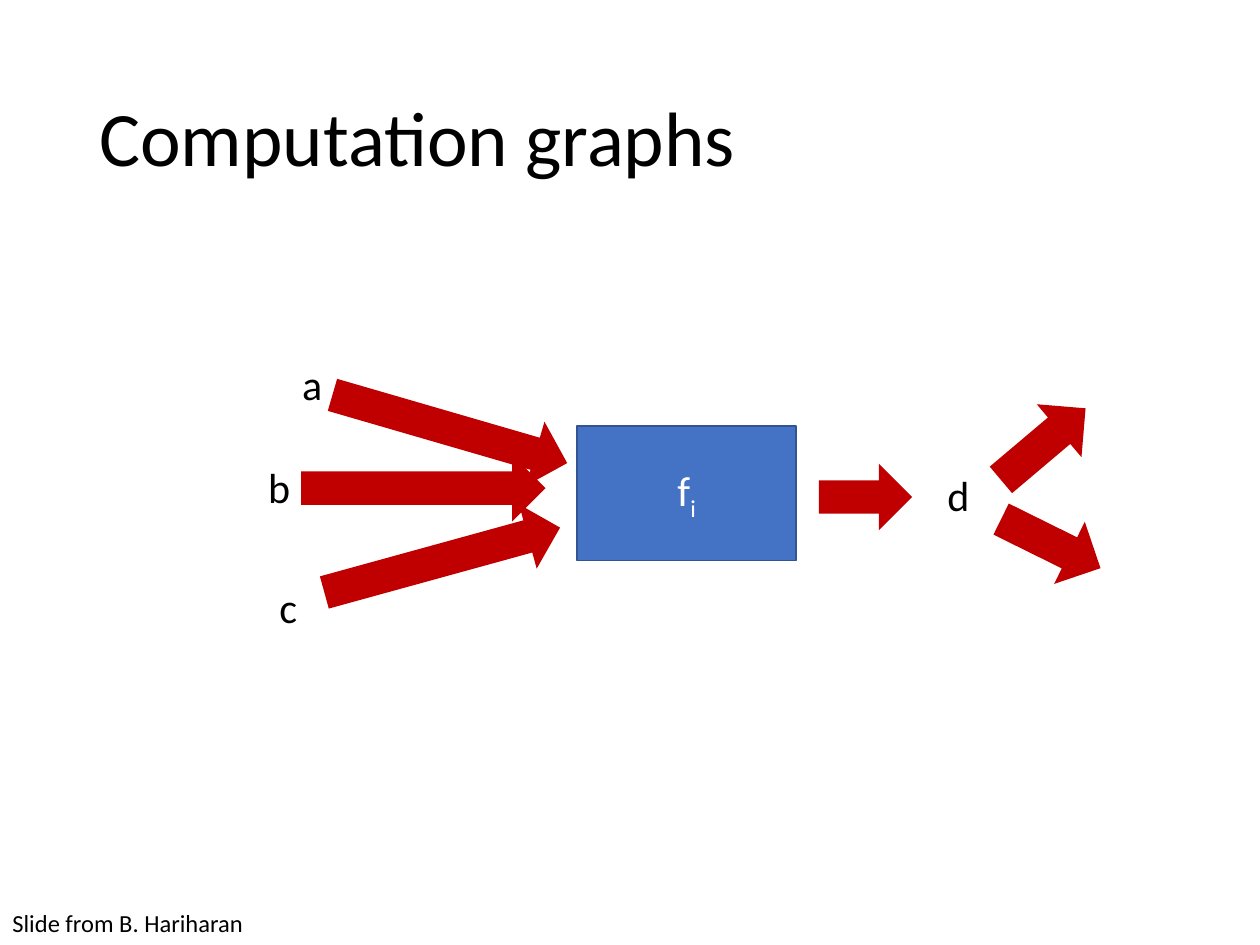
from pptx import Presentation
from pptx import util as u
from pptx.dml.color import RGBColor
from pptx.enum import shapes, text

BLACK = RGBColor(0, 0, 0)
WHITE = RGBColor(255, 255, 255)
BLUE = RGBColor(0x44, 0x72, 0xC4)
NAVY = RGBColor(0x32, 0x54, 0x91)
RED = RGBColor(0xC0, 0, 0)

LABELS = [("a", 2.3, 2.8), ("b", 2.03, 3.61), ("c", 2.12, 4.57), ("d", 7.42, 3.68)]
ARROWS = [
    (6.5, 3.68, 0.74, 0.53, 0),
    (2.6, 3.14, 1.94, 0.53, 16.2),
    (2.54, 4.18, 1.94, 0.53, 344.6),
    (2.39, 3.61, 1.94, 0.53, 0),
    (7.84, 3.25, 0.88, 0.55, 319.8),
    (7.9, 4.04, 0.88, 0.55, 26.3),
]


def write(frame, words, size=24, color=BLACK, align=text.PP_ALIGN.LEFT,
          anchor=text.MSO_ANCHOR.TOP, spacing=1.0, sub=None):
    """Write one paragraph, with an optional subscript at its end."""
    frame.word_wrap = True
    frame.vertical_anchor = anchor
    para = frame.paragraphs[0]
    para.alignment = align
    para.line_spacing = spacing
    for part in filter(None, (words, sub)):
        run = para.add_run()
        run.text = part
        run.font.name = "Calibri"
        run.font.size = u.Pt(size)
        run.font.color.rgb = color
    if sub:
        run.font._element.set("baseline", "-25000")


def add_text(slide, words, box, **style):
    """Add a text box at left, top, width, height in inches."""
    area = slide.shapes.add_textbox(*map(u.Inches, box))
    write(area.text_frame, words, **style)


def add_block(slide, kind, box, fill, line=None, turn=0):
    """Add a filled shape, outlined only when a line colour is given."""
    block = slide.shapes.add_shape(kind, *map(u.Inches, box))
    block.shadow.inherit = False
    block.rotation = turn
    block.fill.solid()
    block.fill.fore_color.rgb = fill
    if line is None:
        block.line.fill.background()
    else:
        block.line.color.rgb = line
        block.line.width = u.Pt(1)
    return block


def main():
    """Build the computation graph slide."""
    deck = Presentation()
    deck.slide_width, deck.slide_height = u.Inches(10), u.Inches(7.5)
    slide = deck.slides.add_slide(deck.slide_layouts[6])
    kinds = shapes.MSO_SHAPE
    middle = text.MSO_ANCHOR.MIDDLE

    add_text(slide, "Computation graphs", (0.69, 0.4, 8.62, 1.45),
             size=44, anchor=middle, spacing=0.9)
    node = add_block(slide, kinds.RECTANGLE, (4.58, 3.38, 1.74, 1.07), BLUE, NAVY)
    write(node.text_frame, "f", sub="i", color=WHITE,
          align=text.PP_ALIGN.CENTER, anchor=middle)
    for name, left, top in LABELS:
        add_text(slide, name, (left, top, 0.54, 0.5))
    for *box, turn in ARROWS:
        add_block(slide, kinds.RIGHT_ARROW, box, RED, turn=turn)
    add_text(slide, "Slide from B. Hariharan", (0, 7.16, 2.07, 0.34), size=14)
    deck.save("out.pptx")


if __name__ == "__main__":
    main()
